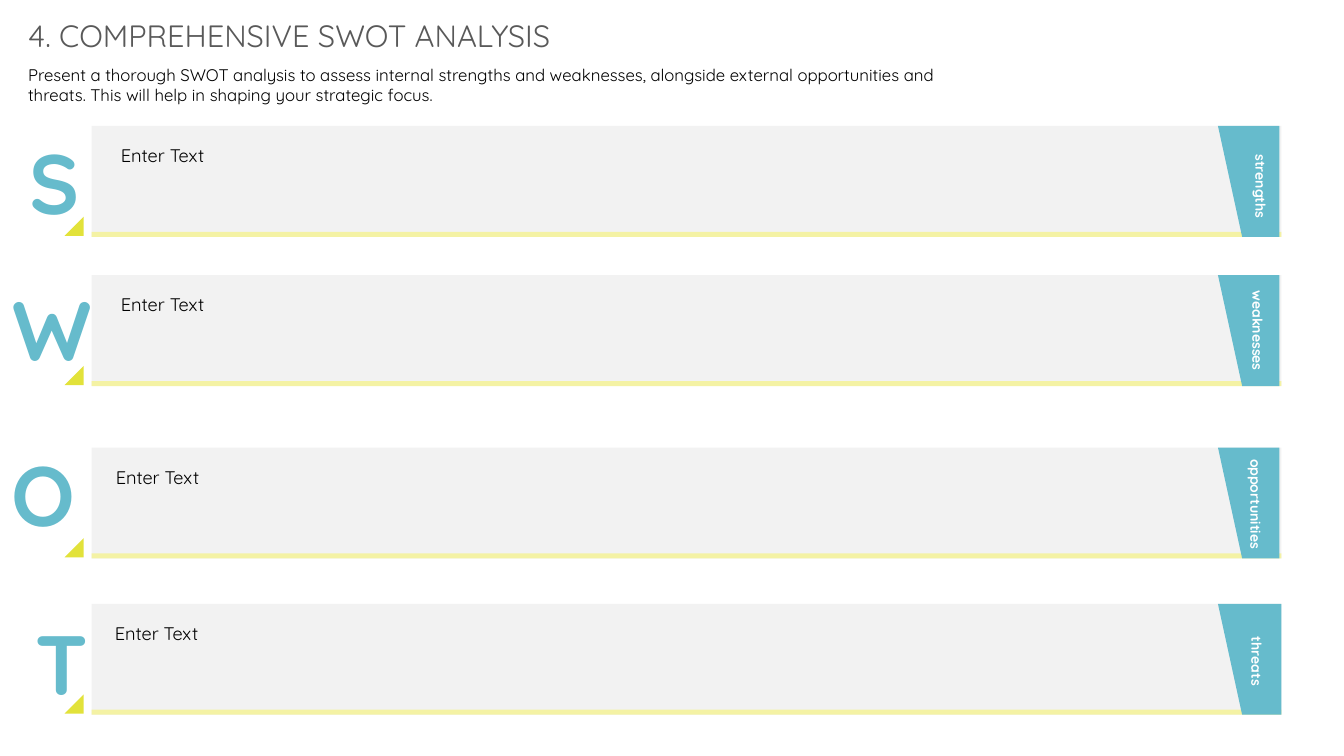
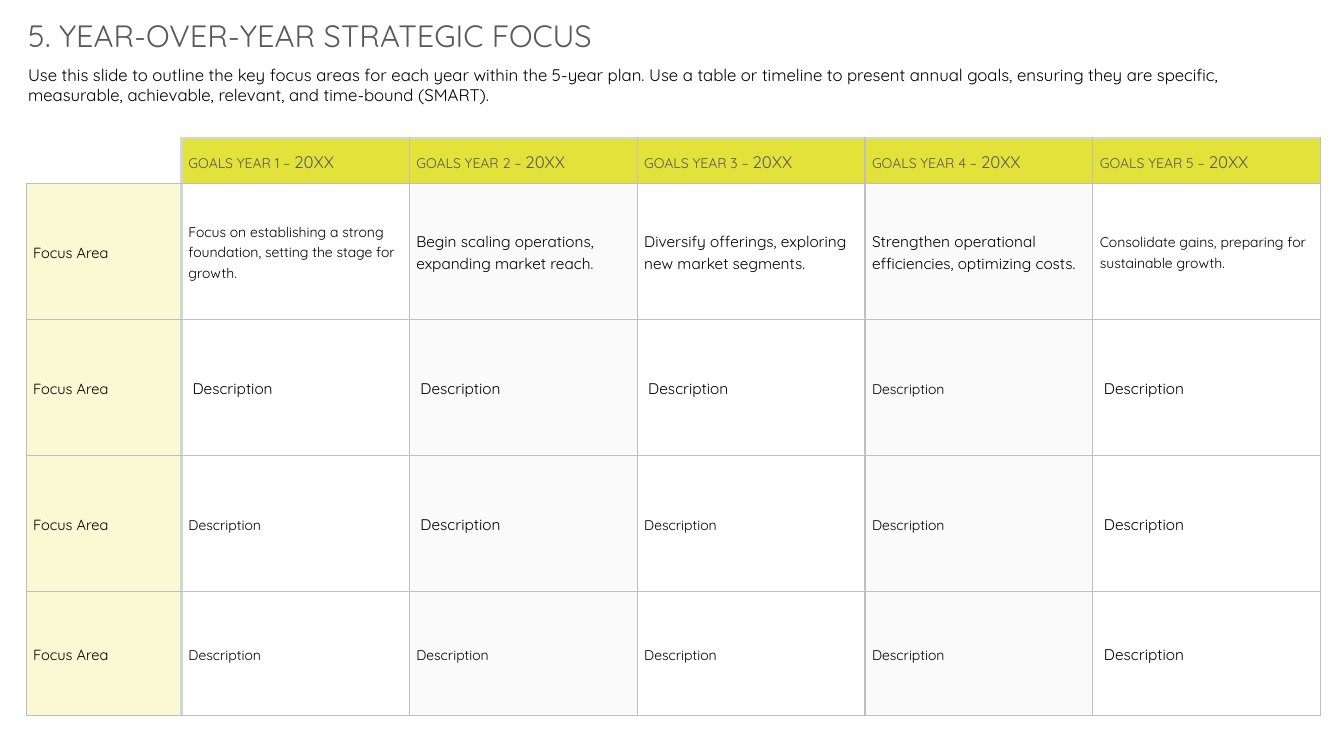
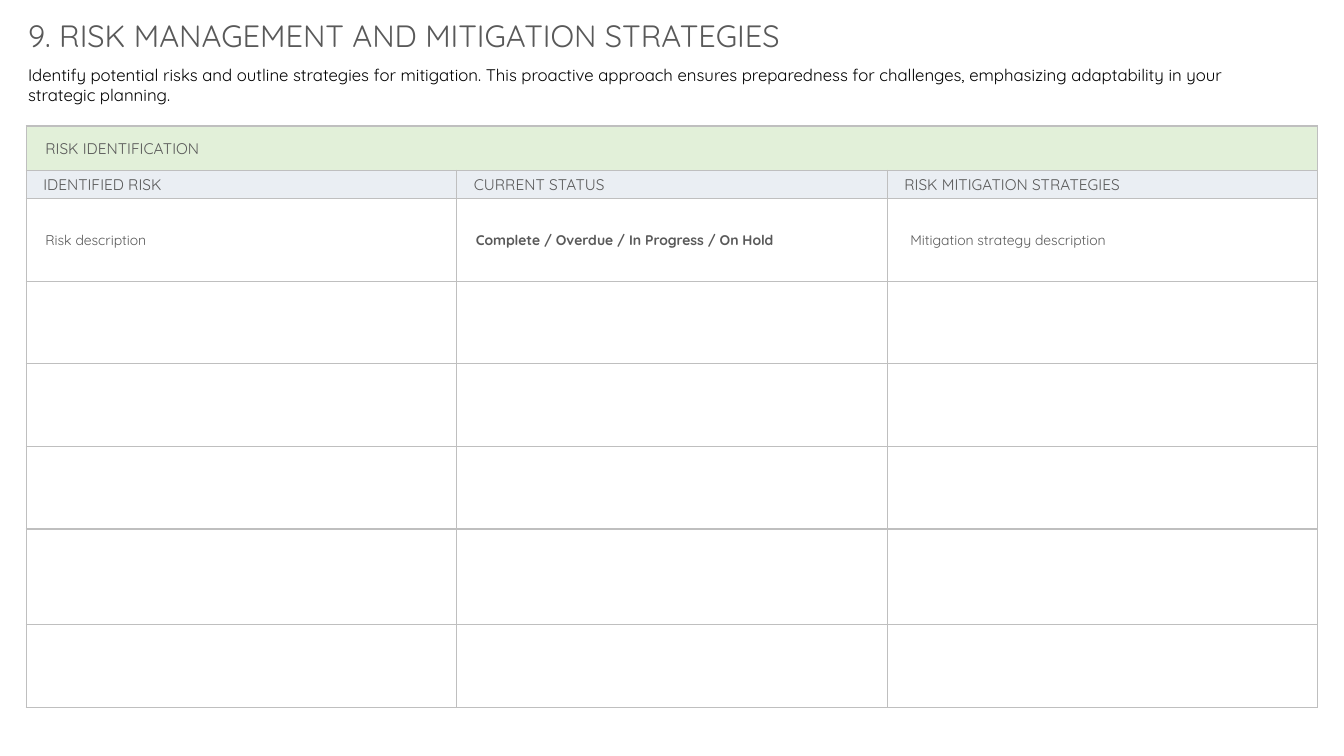
from lxml import etree
from pptx import Presentation
from pptx.dml import color
from pptx.enum import shapes, text
from pptx.oxml import ns
from pptx.util import Inches, Pt

rgb = color.RGBColor.from_string
FONT = "Quicksand"
BLACK, GRAY, WHITE = "000000", "595959", "FFFFFF"
TEAL, LIME, PALE_LIME = "66BBCC", "E2E23A", "F4F2A4"
PANEL, CREAM, STRIPE = "F2F2F2", "FAF9D3", "FAFAFA"
GREEN, BLUE_GRAY = "E2F0D9", "EAEEF3"
THIN, THICK = ("BFBFBF", 1), ("CED9D6", 2.25)


def write(tf, words, size, ink, bold=False, spacing=None, indent=0):
    p = tf.paragraphs[0]
    p.text = words
    if indent:
        p._p.get_or_add_pPr().set("indent", str(Inches(indent)))
    p.line_spacing = spacing
    p.font.name, p.font.size, p.font.bold = FONT, Pt(size), bold
    p.font.color.rgb = rgb(ink)
    return p


def style_cell(cell, fill, inset, edges):
    cell.margin_left = cell.margin_right = Inches(inset)
    cell.margin_top = cell.margin_bottom = 0
    cell.vertical_anchor = text.MSO_ANCHOR.MIDDLE
    tcPr = cell._tc.get_or_add_tcPr()
    for side, (ink, width) in edges.items():
        ln = etree.SubElement(tcPr, ns.qn("a:ln" + side), w=str(Pt(width)))
        solid = etree.SubElement(ln, ns.qn("a:solidFill"))
        etree.SubElement(solid, ns.qn("a:srgbClr"), val=ink)
    if fill:
        cell.fill.solid()
        cell.fill.fore_color.rgb = rgb(fill)
    else:
        cell.fill.background()


prs = Presentation()
prs.slide_width, prs.slide_height = Inches(13.33), Inches(7.5)

headings = [
    ("4. COMPREHENSIVE SWOT ANALYSIS", 6.33,
     "Present a thorough SWOT analysis to assess internal strengths and weaknesses, alongside "
     "external opportunities and threats. This will help in shaping your strategic focus.", 9.22),
    ("5. YEAR-OVER-YEAR STRATEGIC FOCUS", 6.33,
     "Use this slide to outline the key focus areas for each year within the 5-year plan. Use a "
     "table or timeline to present annual goals, ensuring they are specific, measurable, "
     "achievable, relevant, and time-bound (SMART).", 12.06),
    ("9. RISK MANAGEMENT AND MITIGATION STRATEGIES", 9.8,
     "Identify potential risks and outline strategies for mitigation. This proactive approach "
     "ensures preparedness for challenges, emphasizing adaptability in your strategic planning.",
     12.06),
]
for title, title_width, intro, intro_width in headings:
    s = prs.slides.add_slide(prs.slide_layouts[5])
    sp = s.shapes.title
    sp.left, sp.top = Inches(0.18), Inches(0.12)
    sp.width, sp.height = Inches(title_width), Inches(0.47)
    box = s.shapes.add_textbox(Inches(0.18), Inches(0.59), Inches(intro_width), Inches(0.5))
    for shape, words, size, ink in [(sp, title, 22, GRAY), (box, intro, 12, BLACK)]:
        tf = shape.text_frame
        tf.word_wrap = True
        tf.auto_size = text.MSO_AUTO_SIZE.SHAPE_TO_FIT_TEXT
        tf.vertical_anchor = text.MSO_ANCHOR.TOP
        write(tf, words, size, ink).alignment = text.PP_ALIGN.LEFT

swot, focus, risks = prs.slides

bands = [
    ("S", 0.19, 1.25, 1.25, 1.1, "strengths", 11.96, 1.63, 12.69),
    ("W", 0.03, 2.7, 2.73, 1.1, "weaknesses", 11.93, 3.06, 12.69),
    ("O", 0.02, 4.34, 4.44, 1.05, "opportunities", 11.91, 4.78, 12.69),
    ("T", 0.25, 6.02, 5.99, 1.04, "threats", 11.92, 6.34, 12.71),
]
for letter, letter_x, letter_y, top, entry_x, label, label_x, label_y, right in bands:
    panel = swot.shapes.add_shape(shapes.MSO_SHAPE.RECTANGLE, Inches(0.91), Inches(top),
                                  Inches(11.8), Inches(1.1))
    rule = swot.shapes.add_shape(shapes.MSO_SHAPE.RECTANGLE, Inches(0.91), Inches(top + 1.05),
                                 Inches(11.8), Inches(0.05))
    corner = swot.shapes.add_shape(shapes.MSO_SHAPE.RIGHT_TRIANGLE, Inches(0.64),
                                   Inches(top + 0.9), Inches(0.19), Inches(0.19))
    corner.rotation = 270
    outline = swot.shapes.build_freeform(Inches(right), Inches(top + 1.1))
    outline.add_line_segments([(Inches(x), Inches(y)) for x, y in
                               [(12.32, top + 1.1), (12.08, top), (right, top)]])
    tab = outline.convert_to_shape()
    for sp, fill in [(panel, PANEL), (rule, PALE_LIME), (corner, LIME), (tab, TEAL)]:
        sp.shadow.inherit = False
        sp.fill.solid()
        sp.fill.fore_color.rgb = rgb(fill)
        sp.line.fill.background()

    sp = swot.shapes.add_textbox(Inches(letter_x), Inches(letter_y), Inches(0.62), Inches(1.11))
    sp.text_frame.word_wrap = True
    write(sp.text_frame, letter, 60, TEAL, True)

    entry = swot.shapes.add_textbox(Inches(entry_x), Inches(top + 0.05),
                                    Inches(10.05 - entry_x), Inches(1.05))
    write(entry.text_frame, "Enter Text", 13, BLACK, spacing=1.15)

    name = swot.shapes.add_textbox(Inches(label_x), Inches(label_y), Inches(1.07), Inches(0.44))
    name.rotation = 90
    name.text_frame.margin_left = name.text_frame.margin_right = 0
    p = write(name.text_frame, label, 10, WHITE, True, 1.15)
    p.alignment = text.PP_ALIGN.CENTER
    for sp in (entry, name):
        sp.text_frame.word_wrap = True
        sp.text_frame.margin_top = Inches(0.1)
        sp.text_frame.paragraphs[0].space_after = Pt(8)

goals = [
    [("Focus on establishing a strong foundation, setting the stage for growth.", 10),
     ("Begin scaling operations, expanding market reach.", 11),
     ("Diversify offerings, exploring new market segments.", 11),
     ("Strengthen operational efficiencies, optimizing costs.", 11),
     ("Consolidate gains, preparing for sustainable growth.", 10)],
] + [[("Description", size) for size in sizes] for sizes in
     [(11, 11, 11, 10, 11), (10, 11, 10, 10, 11), (10, 10, 10, 10, 11)]]
col_widths = [1.54] + [2.26] * 5
row_heights = [0.45, 1.35, 1.35, 1.35, 1.23]
table = focus.shapes.add_table(5, 6, Inches(0.26), Inches(1.37), Inches(sum(col_widths)),
                               Inches(sum(row_heights))).table
table.first_row = table.horz_banding = False
for col, width in zip(table.columns, col_widths):
    col.width = Inches(width)
for row, height in zip(table.rows, row_heights):
    row.height = Inches(height)
for i in range(5):
    for j in range(6):
        cell = table.cell(i, j)
        edges = {"L": THICK if j == 1 else THIN, "R": THICK if j == 0 else THIN,
                 "T": THICK if i == 0 else THIN, "B": THIN}
        if i == 0 and j == 0:
            style_cell(cell, None, 0.07, {"R": THICK, "B": THIN})
        elif i == 0:
            style_cell(cell, LIME, 0.07, edges)
            p = write(cell.text_frame, f"GOALS YEAR {j} – ", 10, GRAY, spacing=1.15)
            r = p.add_run()
            r.text = "20XX"
            r.font.size = Pt(12)
        elif j == 0:
            style_cell(cell, CREAM, 0.07, edges)
            write(cell.text_frame, "Focus Area", 10.5, BLACK, spacing=1.15)
        else:
            style_cell(cell, STRIPE if j % 2 == 0 else None, 0.07, edges)
            words, size = goals[i - 1][j - 1]
            indent = 0.04 if i > 1 and size == 11 else 0
            write(cell.text_frame, words, size, BLACK, spacing=1.15, indent=indent)

risk_rows = [
    (0.44, GREEN, 11, [("RISK IDENTIFICATION", 0.14, False)]),
    (0.28, BLUE_GRAY, 11, [("IDENTIFIED RISK", 0.12, False), ("CURRENT STATUS", 0.12, False),
                           ("RISK MITIGATION STRATEGIES", 0.12, False)]),
    (0.82, None, 10, [("Risk description", 0.14, False),
                      ("Complete / Overdue / In Progress / On Hold", 0.14, True),
                      ("Mitigation strategy description", 0.18, False)]),
] + [(height, None, 10, []) for height in (0.82, 0.82, 0.82, 0.95, 0.82)]
table = risks.shapes.add_table(len(risk_rows), 3, Inches(0.26), Inches(1.25), Inches(4.27 * 3),
                               Inches(sum(row[0] for row in risk_rows))).table
table.first_row = table.horz_banding = False
for col in table.columns:
    col.width = Inches(4.27)
for i, (height, fill, size, entries) in enumerate(risk_rows):
    table.rows[i].height = Inches(height)
    for j in range(3):
        style_cell(table.cell(i, j), fill, 0.05, dict.fromkeys("LRTB", THIN))
    for j, (words, indent, bold) in enumerate(entries):
        write(table.cell(i, j).text_frame, words, size, GRAY, bold, 1.07, indent)
table.cell(0, 0).merge(table.cell(0, 2))

prs.save("out.pptx")
